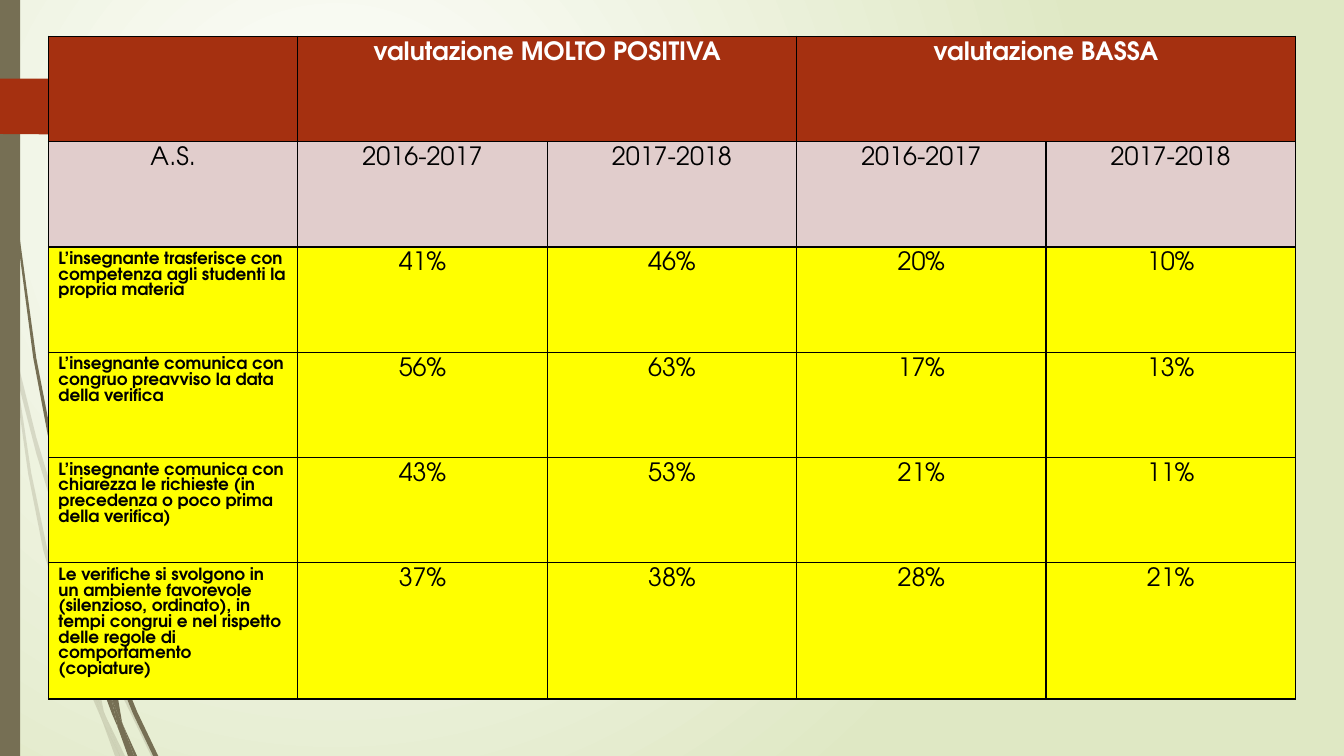
import pptx
import pptx.util
import pptx.dml.color
import pptx.enum.shapes
import pptx.enum.text
import lxml.etree

Inches, Pt = pptx.util.Inches, pptx.util.Pt
DRAWING = "http://schemas.openxmlformats.org/drawingml/2006/main"
FONT = "TeX Gyre Adventor"
OLIVE, RUST, ROSE, YELLOW = "766F54", "A53010", "E1CDCC", "FFFF00"

# Outline points of the grass blades, in inches
PALE_BLADES = [
    [(0.11, 3.5), (0.09, 3.22), (0, 2.82), (0, 2.99), (0.1, 3.44)],
    [(0.58, 5.22), (0.84, 5.99), (0.85, 5.86), (0.62, 5.2), (0.36, 4.34), (0.14, 3.45), (0.17, 3.76), (0.36, 4.5)],
    [(0.92, 6.07), (0.88, 5.96), (0.88, 6.1), (1.23, 6.94), (1.5, 7.5), (1.55, 7.5), (1.27, 6.92)],
    [(1.19, 7.5), (1.24, 7.5), (1.05, 7.11)],
    [(0.93, 6.83), (0.7, 6.19), (0.47, 5.45), (0.31, 4.69), (0.17, 3.76), (0.11, 3.5), (0.28, 4.7),
     (0.43, 5.46), (0.65, 6.21), (0.92, 6.93), (1.01, 7.14), (0.99, 7.07)],
    [(0.84, 5.99), (0.87, 6.46), (0.93, 6.83), (0.96, 6.92), (1.05, 7.11), (1.03, 7.06), (0.91, 6.46),
     (0.88, 6.1), (0.88, 6.08)],
    [(0.88, 5.84), (1.1, 4.62), (1.6, 3.49), (2.29, 2.45), (2.68, 1.98), (2.9, 1.75), (3.12, 1.53),
     (2.89, 1.75), (2.68, 1.97), (2.28, 2.44), (1.58, 3.48), (1.07, 4.61), (0.85, 5.84), (0.85, 5.86), (0.88, 5.96)],
    [(1.01, 7.14), (1.14, 7.5), (1.19, 7.5)],
    [(0.88, 6.08), (0.88, 6.1), (0.88, 5.96), (0.85, 5.86), (0.84, 5.99)],
    [(0.96, 6.92), (0.93, 6.83), (0.99, 7.07), (1.01, 7.14), (1.19, 7.5), (1.05, 7.11)],
]
DARK_BLADES = [
    [(0.07, 1.1), (0.17, 2.33), (0.33, 3.55), (0.56, 4.77), (0.57, 4.81), (0.55, 4.57), (0.55, 4.53),
     (0.36, 3.55), (0.19, 2.32), (0.08, 1.09), (0.05, 0.48), (0.04, 0), (0.03, 0), (0.04, 0.48)],
    [(0.88, 5.92), (1.06, 6.45), (1.06, 6.31), (0.93, 5.9), (0.6, 4.72), (0.64, 5.05)],
    [(1.13, 6.49), (1.1, 6.41), (1.11, 6.56), (1.32, 7.08), (1.52, 7.5), (1.57, 7.5), (1.36, 7.06)],
    [(1.1, 6.91), (0.98, 6.57), (0.72, 5.56), (0.64, 5.05), (0.57, 4.77), (0.68, 5.57), (0.93, 6.59),
     (1.11, 7.08), (1.17, 7.22), (1.16, 7.17)],
    [(0.6, 4.72), (0.58, 4.53), (0.54, 3.49), (0.58, 2.45), (0.63, 1.93), (0.7, 1.41), (0.62, 1.93),
     (0.56, 2.45), (0.52, 3.49), (0.55, 4.49)],
    [(1.33, 7.5), (1.36, 7.5), (1.22, 7.19)],
    [(0.57, 4.77), (0.64, 5.05), (0.6, 4.72), (0.55, 4.49), (0.55, 4.53)],
    [(1.11, 6.33), (1.25, 5.52), (1.58, 4.76), (2.05, 4.06), (2.31, 3.74), (2.45, 3.59), (2.61, 3.44),
     (2.45, 3.58), (2.31, 3.73), (2.04, 4.05), (1.56, 4.74), (1.22, 5.51), (1.06, 6.31), (1.1, 6.41)],
    [(1.17, 7.22), (1.27, 7.5), (1.31, 7.5)],
    [(1.06, 6.45), (1.1, 6.91), (1.16, 7.06), (1.22, 7.19), (1.21, 7.16), (1.11, 6.56), (1.09, 6.51)],
    [(1.06, 6.45), (1.09, 6.51), (1.11, 6.56), (1.1, 6.41), (1.06, 6.31)],
    [(1.16, 7.06), (1.1, 6.91), (1.16, 7.17), (1.17, 7.22), (1.3, 7.5), (1.33, 7.5), (1.22, 7.19)],
]
RIBBON = [(1.74, 1.06), (1.48, 1.33), (1.46, 1.34), (0, 1.33), (0, 0.78), (1.46, 0.78), (1.48, 0.79)]

ROWS = [
    ["", "valutazione MOLTO POSITIVA", "", "valutazione BASSA", ""],
    ["A.S.", "2016-2017", "2017-2018", "2016-2017", "2017-2018"],
    ["L’insegnante trasferisce con competenza agli studenti la propria materia",
     "41%", "46%", "20%", "10%"],
    ["L’insegnante comunica con congruo preavviso la data della verifica",
     "56%", "63%", "17%", "13%"],
    ["L’insegnante comunica con chiarezza le richieste (in precedenza o poco prima della verifica)",
     "43%", "53%", "21%", "11%"],
    ["Le verifiche si svolgono in un ambiente favorevole (silenzioso, ordinato), in tempi congrui "
     "e nel rispetto delle regole di comportamento (copiature)",
     "37%", "38%", "28%", "21%"],
]


def paint(fill, color):
    """Make a fill solid in the given hex colour."""
    fill.solid()
    fill.fore_color.rgb = pptx.dml.color.RGBColor.from_string(color)


def add_outline(points, color, alpha=100):
    """Draw a closed, borderless polygon; alpha is its opacity in percent."""
    # The builder keeps whole units only, so its unit is a hundredth of an inch
    start, *others = [(round(x * 100), round(y * 100)) for x, y in points]
    builder = slide.shapes.build_freeform(*start, scale=Inches(0.01))
    builder.add_line_segments(others)
    shape = builder.convert_to_shape()
    shape.shadow.inherit = False
    shape.line.fill.background()
    paint(shape.fill, color)
    if alpha < 100:
        tint = shape.fill._xPr.find(f".//{{{DRAWING}}}srgbClr")
        lxml.etree.SubElement(tint, f"{{{DRAWING}}}alpha", val=str(alpha * 1000))


presentation = pptx.Presentation()
presentation.slide_width, presentation.slide_height = Inches(13.33), Inches(7.5)
slide = presentation.slides.add_slide(presentation.slide_layouts[6])

# Radial background
background = slide.background.fill
background.gradient()
for position, (stop, color) in enumerate(zip(background.gradient_stops, ["FFFFFF", "DFE8C4"])):
    stop.color.rgb = pptx.dml.color.RGBColor.from_string(color)
    stop.position = position
gradient = slide._element.find(f".//{{{DRAWING}}}gradFill")
gradient.remove(gradient.find(f"{{{DRAWING}}}lin"))
radial = lxml.etree.SubElement(gradient, f"{{{DRAWING}}}path", path="circle")
lxml.etree.SubElement(radial, f"{{{DRAWING}}}fillToRect", l="50000", t="50000", r="100000", b="100000")

# Left-hand decoration
for blade in PALE_BLADES:
    add_outline(blade, OLIVE, 20)
for blade in DARK_BLADES:
    add_outline(blade, OLIVE)
side_bar = slide.shapes.add_shape(
    pptx.enum.shapes.MSO_SHAPE.RECTANGLE, 0, 0, Inches(0.2), presentation.slide_height)
side_bar.shadow.inherit = False
side_bar.line.fill.background()
paint(side_bar.fill, OLIVE)
add_outline(RIBBON, RUST)

# Survey table
table = slide.shapes.add_table(
    len(ROWS), 5, Inches(0.48), Inches(0.36), Inches(12.37), Inches(6.57)).table
for row in table.rows:
    row.height = Inches(1.045)
table.rows[len(ROWS) - 1].height = Inches(1.35)

for row_index, texts in enumerate(ROWS):
    for column_index, text in enumerate(texts):
        cell = table.cell(row_index, column_index)
        is_header = row_index == 0
        is_label = row_index > 1 and column_index == 0
        cell.margin_left = cell.margin_right = Inches(0.1)
        cell.margin_top = Inches(0.05)
        if text:
            cell.text = text
        paragraph = cell.text_frame.paragraphs[0]
        paragraph.line_spacing = Pt(11.2 if is_label else 17)
        paragraph.alignment = getattr(pptx.enum.text.PP_ALIGN, "LEFT" if is_label else "CENTER")
        paragraph.font.name = FONT
        paragraph.font.size = Pt(12 if is_label else 18)
        paragraph.font.bold = is_header or is_label
        paint(paragraph.font.fill, "FFFFFF" if is_header else "000000")
        properties = cell._tc.get_or_add_tcPr()
        for side in ["lnL", "lnR", "lnT", "lnB"]:
            border = lxml.etree.SubElement(properties, f"{{{DRAWING}}}{side}", w=str(Pt(1)))
            ink = lxml.etree.SubElement(border, f"{{{DRAWING}}}solidFill")
            lxml.etree.SubElement(ink, f"{{{DRAWING}}}srgbClr", val="000000")
        paint(cell.fill, [RUST, ROSE][row_index] if row_index < 2 else YELLOW)

for first_column in [1, 3]:
    table.cell(0, first_column).merge(table.cell(0, first_column + 1))

presentation.save("out.pptx")
